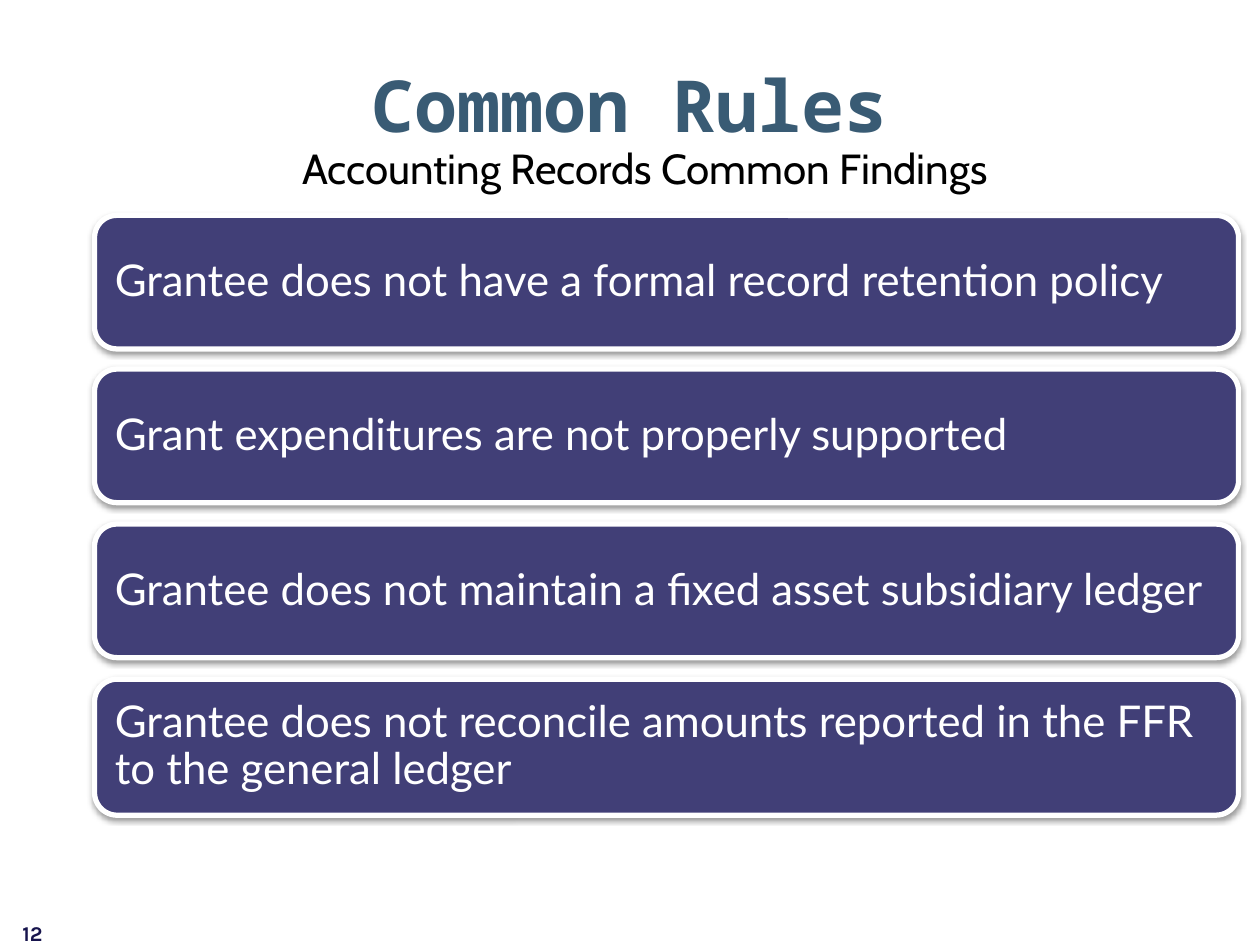
"""Builds the slide on common findings in accounting records."""
from lxml.etree import SubElement
from pptx import Presentation
from pptx.dml.color import RGBColor
from pptx.enum.shapes import MSO_SHAPE
from pptx.enum.text import MSO_ANCHOR, PP_ALIGN
from pptx.oxml.ns import qn
from pptx.util import Emu, Pt

PX = 9144
HUES = {"card": "413F77", "white": "FFFFFF", "title": "395B74",
        "black": "000000", "page": "17144D"}
CARDS = [
    ("Grantee does not have a formal record retention policy", 106),
    ("Grant expenditures are not properly supported", 106),
    ("Grantee does not maintain a fixed asset subsidiary ledger", 106),
    ("Grantee does not reconcile amounts reported in the FFR to the general ledger", 108),
]


def px(size):
    return Emu(size * PX)


def hue(name):
    return RGBColor.from_string(HUES[name])


class Deck:
    def __init__(self, wide, high):
        self.prs = Presentation()
        self.prs.slide_width, self.prs.slide_height = px(wide), px(high)
        self.slide = self.prs.slides.add_slide(self.prs.slide_layouts[6])

    def fill_text(self, frame, words, size, font, color, bold=False, align=PP_ALIGN.LEFT):
        frame.word_wrap = True
        para = frame.paragraphs[0]
        para.text = words
        para.alignment = align
        para.font.size, para.font.name, para.font.bold = Pt(size), font, bold
        para.font.color.rgb = hue(color)
        return para

    def label(self, box, words, size, font, color, bold=False,
              align=PP_ALIGN.LEFT, top=5):
        frame = self.slide.shapes.add_textbox(*map(px, box)).text_frame
        frame.margin_top = px(top)
        self.fill_text(frame, words, size, font, color, bold, align)

    def card(self, box, words):
        shape = self.slide.shapes.add_shape(MSO_SHAPE.ROUNDED_RECTANGLE, *map(px, box))
        shape.fill.solid()
        shape.fill.fore_color.rgb = hue("card")
        shape.line.color.rgb = hue("white")
        shape.line.width = Pt(3)
        self.shade(shape)
        frame = shape.text_frame
        frame.vertical_anchor = MSO_ANCHOR.MIDDLE
        frame.margin_left = frame.margin_right = px(11)
        frame.margin_top = frame.margin_bottom = px(11)
        self.fill_text(frame, words, 25, "Lato", "white").line_spacing = 0.9

    def shade(self, shape):
        shape.shadow.inherit = False
        glow = SubElement(shape.element.spPr.find(qn("a:effectLst")), qn("a:outerShdw"),
                          blurRad=str(Pt(3.1)), dist=str(Pt(1.6)),
                          dir="5400000", rotWithShape="0")
        tint = SubElement(glow, qn("a:srgbClr"), val=HUES["black"])
        SubElement(tint, qn("a:alpha"), val="38000")


def main():
    deck = Deck(1000, 750)
    for row, (words, high) in enumerate(CARDS):
        deck.card((75, 171 + row * 368 // 3, 908, high), words)
    deck.label((108, 108, 808, 50), "Accounting Records Common Findings",
               24, "Cabin", "black", align=PP_ALIGN.CENTER)
    deck.label((50, 48, 900, 107), "Common Rules", 41, "Noto Sans Mono", "title",
               bold=True, align=PP_ALIGN.CENTER, top=0)
    deck.label((8, 726, 233, 40), "12", 12, "Karla", "page", bold=True)
    deck.prs.save("out.pptx")


if __name__ == "__main__":
    main()
